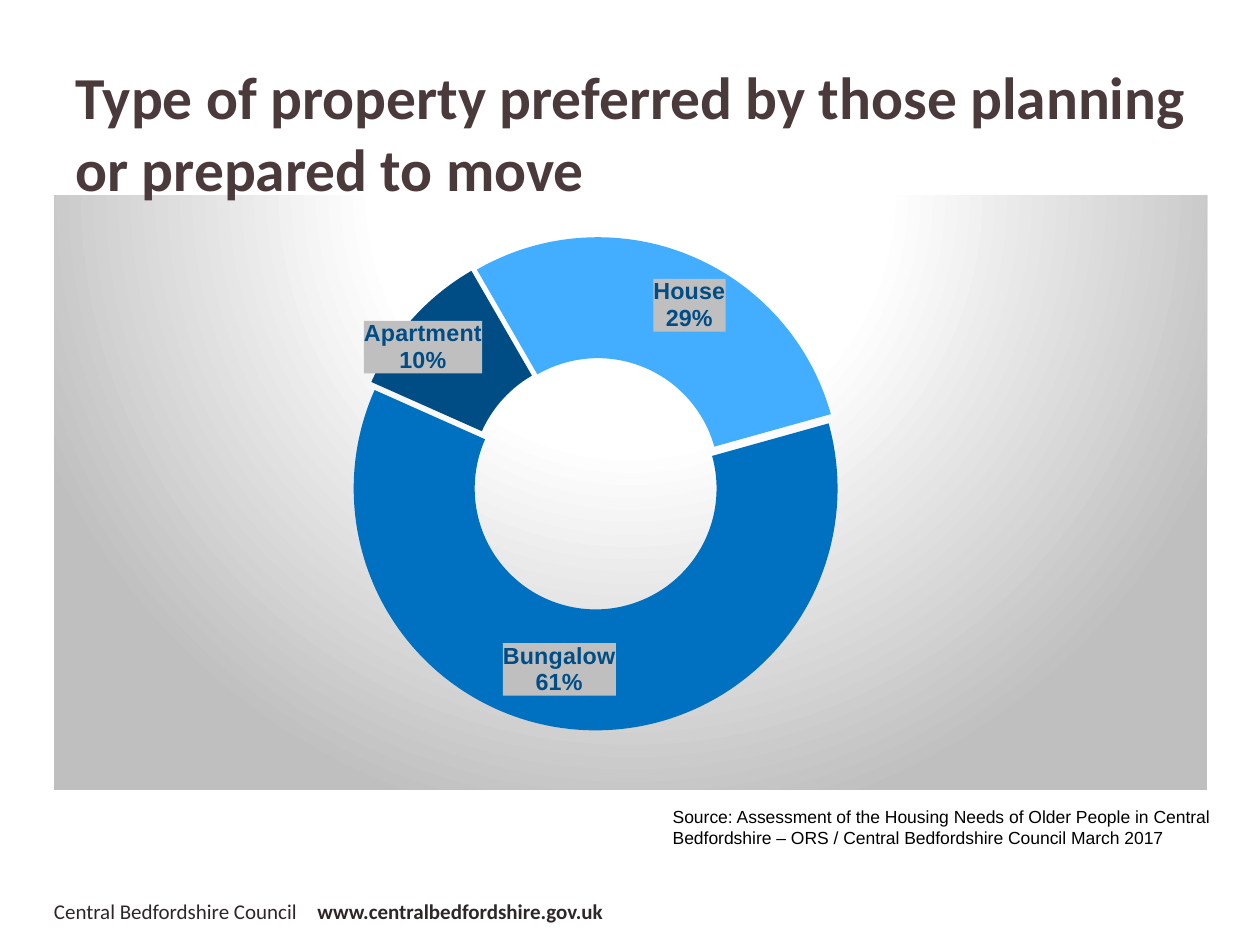
import dataclasses

import lxml.etree
import pptx
import pptx.chart.data
import pptx.dml.color
import pptx.enum.chart
import pptx.enum.text
import pptx.oxml
import pptx.oxml.ns
import pptx.util

Inches = pptx.util.Inches
Pt = pptx.util.Pt
RGB = pptx.dml.color.RGBColor.from_string
qn = pptx.oxml.ns.qn
NS = pptx.oxml.ns.nsdecls("c", "a")


@dataclasses.dataclass(frozen=True)
class Theme:
    heading_font: str = "Calibri"
    body_font: str = "Arial"
    title: str = "4A3A3C"
    footer: str = "2F2727"
    source: str = "000000"
    label: str = "004D86"
    panel: str = "BFBFBF"
    panel_light: str = "FFFFFF"
    title_size: float = 34
    footer_size: float = 12
    source_size: float = 10
    label_size: float = 13.3


@dataclasses.dataclass(frozen=True)
class Slice:
    name: str
    percent: int
    color: str
    label_dx: float  # label offset, as a share of the chart size
    label_dy: float


@dataclasses.dataclass(frozen=True)
class TextBox:
    left: float
    top: float
    width: float
    height: float
    runs: tuple  # (text, bold) pairs
    font: str
    size: float
    color: str
    anchor: pptx.enum.text.MSO_ANCHOR = pptx.enum.text.MSO_ANCHOR.TOP
    tab: float = 0


THEME = Theme()

SLICES = [
    Slice("House", 29, "43AEFF", 0.02, -0.01),
    Slice("Bungalow", 61, "0070C0", -0.02, 0),
    Slice("Apartment", 10, "004D86", -0.03, -0.02),
]

FOOTER = TextBox(
    0.33, 7.08, 7.75, 0.3,
    (("Central Bedfordshire Council\t", False), ("www.centralbedfordshire.gov.uk", True)),
    THEME.heading_font, THEME.footer_size, THEME.footer, tab=2.09)
TITLE = TextBox(
    0.5, 0.42, 9.08, 1.25,
    (("Type of property preferred by those planning or prepared to move", True),),
    THEME.heading_font, THEME.title_size, THEME.title, pptx.enum.text.MSO_ANCHOR.MIDDLE)
SOURCE = TextBox(
    5.24, 6.35, 4.49, 0.44,
    (("Source: Assessment of the Housing Needs of Older People in Central Bedfordshire "
      "– ORS / Central Bedfordshire Council March 2017", False),),
    THEME.body_font, THEME.source_size, THEME.source)


def add_text(s, box: TextBox) -> None:
    shape = s.shapes.add_textbox(
        Inches(box.left), Inches(box.top), Inches(box.width), Inches(box.height))
    tf = shape.text_frame
    tf.word_wrap = True
    tf.vertical_anchor = box.anchor
    p = tf.paragraphs[0]
    if box.tab:
        tabs = lxml.etree.SubElement(p._p.get_or_add_pPr(), qn("a:tabLst"))
        lxml.etree.SubElement(tabs, qn("a:tab"), pos=str(Inches(box.tab)), algn="l")
    p.font.name = box.font
    p.font.size = Pt(box.size)
    p.font.color.rgb = RGB(box.color)
    for text, bold in box.runs:
        r = p.add_run()
        r.text = text
        r.font.bold = bold


def layout_xml(x: float, y: float, extra: str = "", mode: str = "") -> str:
    return (f'<c:layout><c:manualLayout>{mode}<c:x val="{x}"/><c:y val="{y}"/>'
            f'{extra}</c:manualLayout></c:layout>')


def labels_xml(slices: list[Slice]) -> str:
    shows = "".join(
        f'<c:show{part} val="{int(part in ("CatName", "Percent"))}"/>'
        for part in ("LegendKey", "Val", "CatName", "SerName", "Percent", "BubbleSize"))
    style = (
        '<c:numFmt formatCode="0%" sourceLinked="0"/>'
        f'<c:spPr><a:solidFill><a:srgbClr val="{THEME.panel}"/></a:solidFill></c:spPr>'
        '<c:txPr><a:bodyPr/><a:lstStyle/><a:p><a:pPr>'
        f'<a:defRPr sz="{round(THEME.label_size * 100)}" b="1">'
        f'<a:solidFill><a:srgbClr val="{THEME.label}"/></a:solidFill>'
        f'<a:latin typeface="{THEME.body_font}"/></a:defRPr></a:pPr>'
        '<a:endParaRPr lang="en-GB"/></a:p></c:txPr>'
        f'{shows}<c:separator>\n</c:separator>')
    items = "".join(
        f'<c:dLbl><c:idx val="{i}"/>{layout_xml(sl.label_dx, sl.label_dy)}{style}</c:dLbl>'
        for i, sl in enumerate(slices))
    return f'<c:dLbls {NS}>{items}{style}<c:showLeaderLines val="0"/></c:dLbls>'


def panel_xml() -> str:
    stops = "".join(
        f'<a:gs pos="{pos * 1000}"><a:srgbClr val="{color}"/></a:gs>'
        for pos, color in ((0, THEME.panel_light), (39, THEME.panel_light), (100, THEME.panel)))
    return (f'<c:spPr {NS}><a:gradFill><a:gsLst>{stops}</a:gsLst><a:path path="circle">'
            '<a:fillToRect l="50000" t="-80000" r="50000" b="180000"/></a:path></a:gradFill>'
            '<a:ln><a:noFill/></a:ln></c:spPr>')


def add_doughnut(s, slices: list[Slice]) -> None:
    data = pptx.chart.data.CategoryChartData()
    data.categories = [sl.name for sl in slices]
    data.add_series("Series 1", [sl.percent for sl in slices])
    chart = s.shapes.add_chart(
        pptx.enum.chart.XL_CHART_TYPE.DOUGHNUT,
        Inches(0.43), Inches(1.55), Inches(9.15), Inches(4.72), data).chart
    chart.has_title = False
    chart.has_legend = False
    chart.font.name = THEME.body_font
    chart.font.size = Pt(THEME.source_size)
    chart.font.color.rgb = RGB(THEME.source)
    plot = chart.plots[0]
    plot.vary_by_categories = True
    series = plot.series[0]
    for i, sl in enumerate(slices):
        fmt = series.points[i].format
        fmt.fill.solid()
        fmt.fill.fore_color.rgb = RGB(sl.color)
        fmt.line.fill.background()

    # Exploded slices and labels
    ser = series._element
    ser.find(qn("c:tx")).addnext(pptx.oxml.parse_xml(f'<c:explosion {NS} val="4"/>'))
    ser.findall(qn("c:dPt"))[-1].addnext(pptx.oxml.parse_xml(labels_xml(slices)))

    # Ring geometry
    ring = plot._element
    for old in ring.findall(qn("c:dLbls")):
        ring.remove(old)
    ring.find(qn("c:firstSliceAng")).set("val", "330")
    ring.find(qn("c:holeSize")).set("val", "50")

    # Plot position and panel background
    area = ring.getparent()
    for old in area.findall(qn("c:layout")):
        area.remove(old)
    mode = '<c:layoutTarget val="inner"/><c:xMode val="edge"/><c:yMode val="edge"/>'
    place = layout_xml(0.25, 0.07, '<c:w val="0.44"/><c:h val="0.83"/>', mode)
    area.insert(0, pptx.oxml.parse_xml(place.replace("<c:layout>", f"<c:layout {NS}>", 1)))
    area.getparent().addnext(pptx.oxml.parse_xml(panel_xml()))


def main() -> None:
    prs = pptx.Presentation()
    prs.slide_width, prs.slide_height = Inches(10), Inches(7.5)
    s = prs.slides.add_slide(prs.slide_layouts[6])
    add_text(s, FOOTER)
    add_doughnut(s, SLICES)
    add_text(s, TITLE)
    add_text(s, SOURCE)
    prs.save("out.pptx")


if __name__ == "__main__":
    main()
